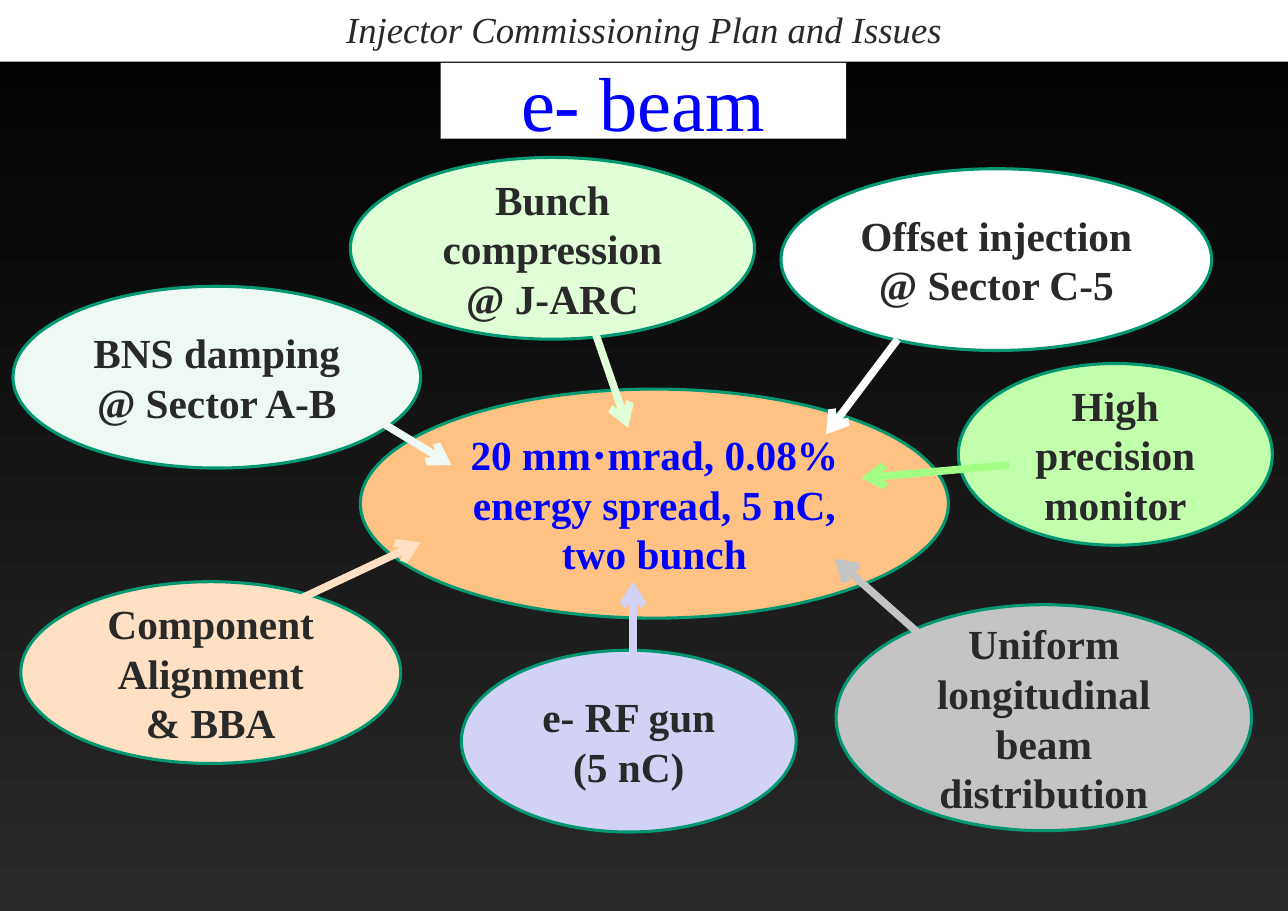
import dataclasses

import pptx
import pptx.dml.color
import pptx.enum.shapes
import pptx.enum.text
import pptx.oxml
import pptx.oxml.ns
import pptx.util

Cm = pptx.util.Cm
Pt = pptx.util.Pt
Preset = pptx.enum.shapes.MSO_SHAPE
Anchor = pptx.enum.text.MSO_ANCHOR


@dataclasses.dataclass(frozen=True)
class Theme:
    font: str = "Times New Roman"
    black: str = "000000"
    ink: str = "292929"
    white: str = "FFFFFF"
    blue: str = "0000FF"
    outline: str = "009771"
    target: str = "FFC285"
    header_size: int = 24
    title_size: int = 50
    factor_size: int = 27
    outline_width: int = 2
    arrow_width: int = 5


THEME = Theme()

FACTORS = [
    ("Component Alignment\n& BBA", (0.48, 13.41, 8.76, 4.19), "FFE0C2",
     (5.97, 14.25, 9.7, 12.5), "FFE0C2"),
    ("e- RF gun\n(5 nC)", (10.64, 14.99, 7.72, 4.19), "D2D2F4",
     (14.6, 15.54, 14.6, 13.41), "D2D2F4"),
    ("Offset injection\n@ Sector C-5", (18.01, 3.89, 9.93, 4.19), "FFFFFF",
     (20.7, 7.82, 19.05, 10.01), "FFFFFF"),
    ("Bunch compression @ J-ARC", (8.08, 3.63, 9.32, 4.19), "E0FFD6",
     (13.64, 7.42, 14.48, 9.86), "E0FFD6"),
    ("BNS damping\n@ Sector A-B", (0.3, 6.6, 9.4, 4.19), "EEF9F4",
     (8.08, 9.3, 10.41, 10.72), "EEF9F4"),
    ("Uniform longitudinal beam distribution", (19.28, 13.94, 9.58, 5.21), "C4C4C4",
     (21.62, 14.99, 19.25, 12.88), "C4C4C4"),
    ("High precision monitor", (22.1, 8.38, 7.24, 4.19), "C2FFAD",
     (23.27, 10.72, 19.86, 11.02), "A3FF85"),
]


def rgb(colour):
    return pptx.dml.color.RGBColor.from_string(colour)


def apply(item, formats):
    for name, value in formats.items():
        setattr(item, name, value)


def paint_background(slide):
    fill = slide.background.fill
    fill.gradient()
    fill.gradient_angle = 270
    for stop, colour, position in zip(fill.gradient_stops, (THEME.black, THEME.ink), (0, 1)):
        stop.color.rgb = rgb(colour)
        stop.position = position


def add_panel(slide, preset, box, fill, text, colour, **font_formats):
    panel = slide.shapes.add_shape(preset, *map(Cm, box))
    panel.shadow.inherit = False
    panel.fill.solid()
    panel.fill.fore_color.rgb = rgb(fill)
    panel.line.fill.background()
    frame = panel.text_frame
    apply(frame, {
        "text": text,
        "word_wrap": True,
        "vertical_anchor": Anchor.MIDDLE,
        "margin_left": Cm(0.28),
        "margin_right": Cm(0.28),
        "margin_top": Cm(0.15),
        "margin_bottom": Cm(0.15),
    })
    for paragraph in frame.paragraphs:
        paragraph.alignment = pptx.enum.text.PP_ALIGN.CENTER
        for run in paragraph.runs:
            apply(run.font, {"name": THEME.font, **font_formats})
            run.font.color.rgb = rgb(colour)
    return panel


def add_bubble(slide, box, fill, text, colour):
    bubble = add_panel(slide, Preset.OVAL, box, fill, text, colour,
                       size=Pt(THEME.factor_size), bold=True)
    bubble.line.color.rgb = rgb(THEME.outline)
    bubble.line.width = Pt(THEME.outline_width)


def add_arrow(slide, ends, colour):
    arrow = slide.shapes.add_connector(
        pptx.enum.shapes.MSO_CONNECTOR.STRAIGHT, *map(Cm, ends))
    arrow.line.color.rgb = rgb(colour)
    arrow.line.width = Pt(THEME.arrow_width)
    properties = arrow._element.spPr
    head = pptx.oxml.parse_xml(f'<a:tailEnd {pptx.oxml.ns.nsdecls("a")} type="arrow"/>')
    properties.find(pptx.oxml.ns.qn("a:ln")).append(head)
    properties.append(pptx.oxml.parse_xml(f'<a:effectLst {pptx.oxml.ns.nsdecls("a")}/>'))


def main():
    deck = pptx.Presentation()
    apply(deck, {"slide_width": Cm(29.7), "slide_height": Cm(21)})
    slide = deck.slides.add_slide(deck.slide_layouts[6])
    paint_background(slide)
    header = add_panel(slide, Preset.RECTANGLE, (0, 0, 29.7, 1.42), THEME.white,
                       "Injector Commissioning Plan and Issues", THEME.ink,
                       size=Pt(THEME.header_size), italic=True)
    header.text_frame.vertical_anchor = Anchor.TOP
    add_panel(slide, Preset.RECTANGLE, (10.16, 1.45, 9.35, 1.75), THEME.white,
              "e- beam", THEME.blue, size=Pt(THEME.title_size))
    add_bubble(slide, (8.31, 8.97, 13.56, 5.28), THEME.target,
               "20 mm⋅mrad, 0.08% energy spread, 5 nC, two bunch", THEME.blue)
    for text, box, fill, _, _ in FACTORS:
        add_bubble(slide, box, fill, text, THEME.ink)
    for _, _, _, ends, colour in FACTORS:
        add_arrow(slide, ends, colour)
    deck.save("out.pptx")


if __name__ == "__main__":
    main()
